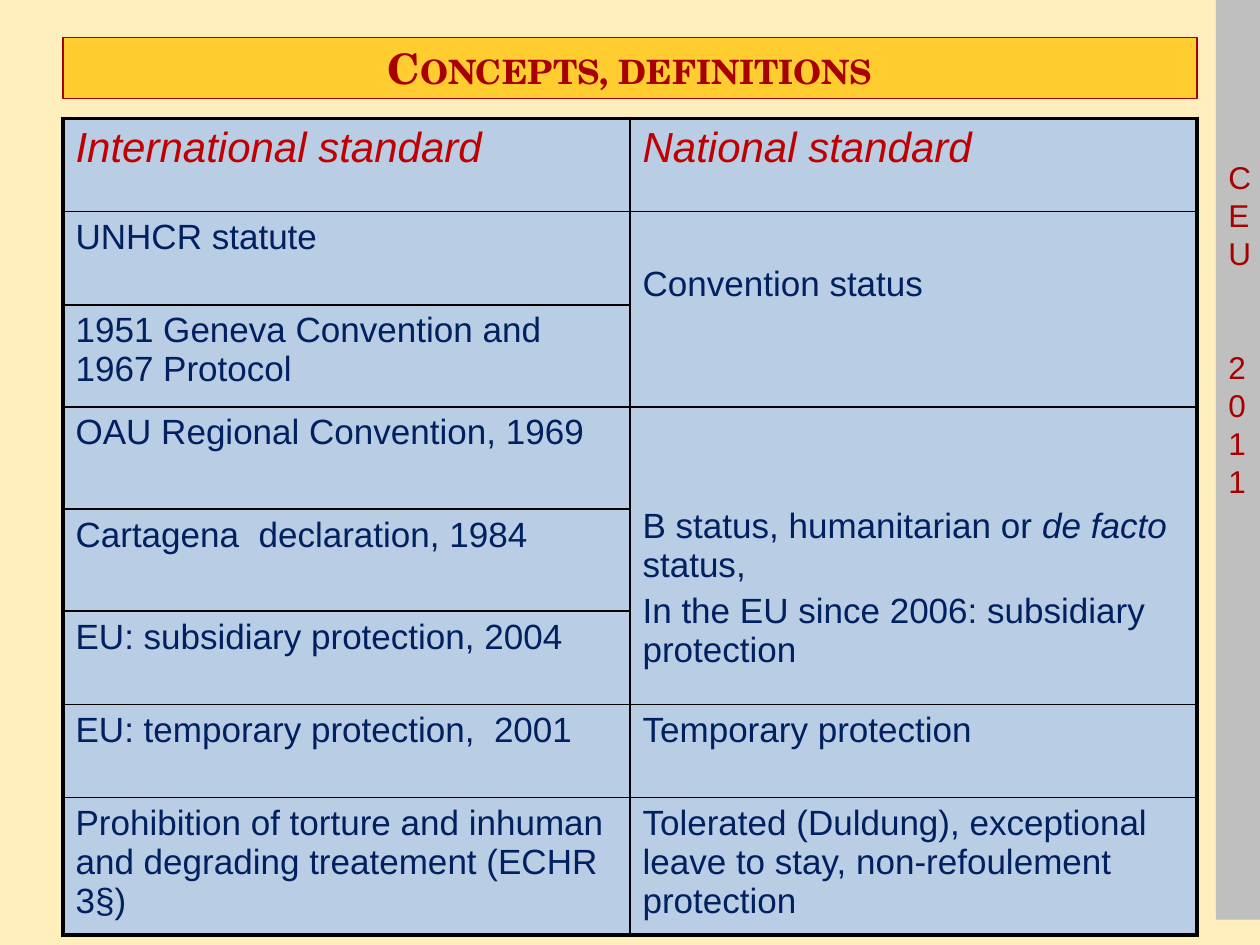
from lxml import etree
from pptx import Presentation
from pptx.dml.color import RGBColor
from pptx.enum.shapes import MSO_SHAPE
from pptx.enum.text import MSO_ANCHOR, PP_ALIGN
from pptx.oxml.ns import qn
from pptx.util import Inches, Pt

RECTANGLE = MSO_SHAPE.RECTANGLE
TOP, MIDDLE = MSO_ANCHOR.TOP, MSO_ANCHOR.MIDDLE
LEFT, CENTER, JUSTIFY = PP_ALIGN.LEFT, PP_ALIGN.CENTER, PP_ALIGN.JUSTIFY

CREAM = RGBColor(0xFF, 0xEF, 0xBD)
GRAY = RGBColor(0xBF, 0xBF, 0xBF)
GOLD = RGBColor(0xFF, 0xCD, 0x2F)
DARK_RED = RGBColor(0xA8, 0x00, 0x00)
RED = RGBColor(0xC0, 0x00, 0x00)
NAVY = RGBColor(0x00, 0x20, 0x60)
PALE_BLUE = RGBColor(0xB9, 0xCD, 0xE5)
BLACK = RGBColor(0x00, 0x00, 0x00)

BODY_FONT, TITLE_FONT = "Arial", "TeX Gyre Schola"
THICK, THIN = 2.25, 1

ROW_HEIGHTS = [9.87, 9.87, 10.8, 10.8, 10.8, 9.87, 9.87, 14.53]
INTERNATIONAL = [
    "International standard",
    "UNHCR statute",
    "1951 Geneva Convention and 1967 Protocol",
    "OAU Regional Convention, 1969",
    "Cartagena  declaration, 1984",
    "EU: subsidiary protection, 2004",
    "EU: temporary protection,  2001",
    "Prohibition of torture and inhuman and degrading treatement (ECHR 3§)",
]
NATIONAL = [
    (0, 1, 0, ["National standard"]),
    (1, 2, 1, ["Convention status"]),
    (3, 3, 2, [["B status, humanitarian or ", "de facto", " status,"],
               "In the EU since 2006: subsidiary protection"]),
    (6, 1, 0, ["Temporary protection"]),
    (7, 1, 0, ["Tolerated (Duldung), exceptional leave to stay, "
               "non-refoulement protection"]),
]


class SlideBuilder:
    def __init__(self, deck):
        self.deck = deck
        self.slide = deck.slides.add_slide(deck.slide_layouts[6])
        self.slide.background.fill.solid()
        self.slide.background.fill.fore_color.rgb = CREAM

    def across(self, percent):
        return round(self.deck.slide_width * percent / 100)

    def down(self, percent):
        return round(self.deck.slide_height * percent / 100)

    def area(self, left, top, width, height):
        return (self.across(left), self.down(top),
                self.across(width), self.down(height))

    def style(self, span, size, color, font=BODY_FONT, bold=False, italic=False):
        span.font.size, span.font.name = Pt(size), font
        span.font.bold, span.font.italic = bold, italic
        span.font.color.rgb = color

    def rectangle(self, area, fill, outline=None):
        box = self.slide.shapes.add_shape(RECTANGLE, *self.area(*area))
        box.shadow.inherit = False
        box.fill.solid()
        box.fill.fore_color.rgb = fill
        if outline is None:
            box.line.fill.background()
        else:
            box.line.color.rgb = outline
            box.line.width = Pt(0.75)
        return box

    def title(self, text, area):
        box = self.rectangle(area, GOLD, DARK_RED)
        frame = box.text_frame
        frame.text = text
        frame.word_wrap = True
        frame.vertical_anchor = MIDDLE
        para = frame.paragraphs[0]
        para.alignment = CENTER
        span = para.runs[0]
        self.style(span, 24, DARK_RED, TITLE_FONT, bold=True)
        span.font._element.set("cap", "small")

    def sidebar(self, words, area, line_height=21.7):
        frame = self.rectangle(area, GRAY).text_frame
        frame.text = "\n".join("".join(words))
        frame.word_wrap = True
        frame.vertical_anchor = TOP
        frame.margin_top = Inches(0.05) + Pt(4 * line_height)
        frame.margin_right = 0
        for para in frame.paragraphs:
            para.alignment = JUSTIFY
            para.line_spacing = Pt(line_height)
            self.style(para.runs[0], 18, DARK_RED)
        frame.paragraphs[len(words[0])].space_before = Pt(2 * line_height)

    def table(self, area, row_heights):
        frame = self.slide.shapes.add_table(len(row_heights), 2, *self.area(*area))
        table = frame.table
        for row, height in zip(table.rows, row_heights):
            row.height = self.down(height)
        last_row = len(row_heights) - 1
        for row in range(len(row_heights)):
            for column in range(2):
                cell = table.cell(row, column)
                cell.fill.solid()
                cell.fill.fore_color.rgb = PALE_BLUE
                outer = [column == 0, column == 1, row == 0, row == last_row]
                self.borders(cell, [THICK if edge else THIN for edge in outer])
        return table

    def borders(self, cell, widths):
        properties = cell._tc.get_or_add_tcPr()
        for index, (side, width) in enumerate(zip("LRTB", widths)):
            line = etree.Element(qn(f"a:ln{side}"), w=str(Pt(width)))
            fill = etree.SubElement(line, qn("a:solidFill"))
            etree.SubElement(fill, qn("a:srgbClr"), val=str(BLACK))
            properties.insert(index, line)

    def cell_text(self, cell, paragraphs, heading=False, lines_down=0):
        cell.margin_top = Inches(0.05 + 0.37 * lines_down)
        frame = cell.text_frame
        for index, pieces in enumerate(paragraphs):
            para = frame.add_paragraph() if index else frame.paragraphs[0]
            para.alignment = LEFT
            if index:
                para.space_before = Pt(4)
            for order, piece in enumerate([pieces] if isinstance(pieces, str) else pieces):
                span = para.add_run()
                span.text = piece
                self.style(span, 24 if heading else 20, RED if heading else NAVY,
                           italic=heading or order == 1)


def main():
    deck = Presentation()
    deck.slide_width, deck.slide_height = Inches(10), Inches(7.5)
    page = SlideBuilder(deck)
    page.sidebar(["CEU", "2011"], (96.5, 0, 3.5, 97.33))
    page.title("Concepts, definitions", (5, 4, 90, 6.4))
    table = page.table((5, 12.53, 90, sum(ROW_HEIGHTS)), ROW_HEIGHTS)
    for row, text in enumerate(INTERNATIONAL):
        page.cell_text(table.cell(row, 0), [text], heading=row == 0)
    for row, span_rows, lines_down, paragraphs in NATIONAL:
        cell = table.cell(row, 1)
        if span_rows > 1:
            cell.merge(table.cell(row + span_rows - 1, 1))
        page.cell_text(cell, paragraphs, row == 0, lines_down)
    deck.save("out.pptx")


if __name__ == "__main__":
    main()
